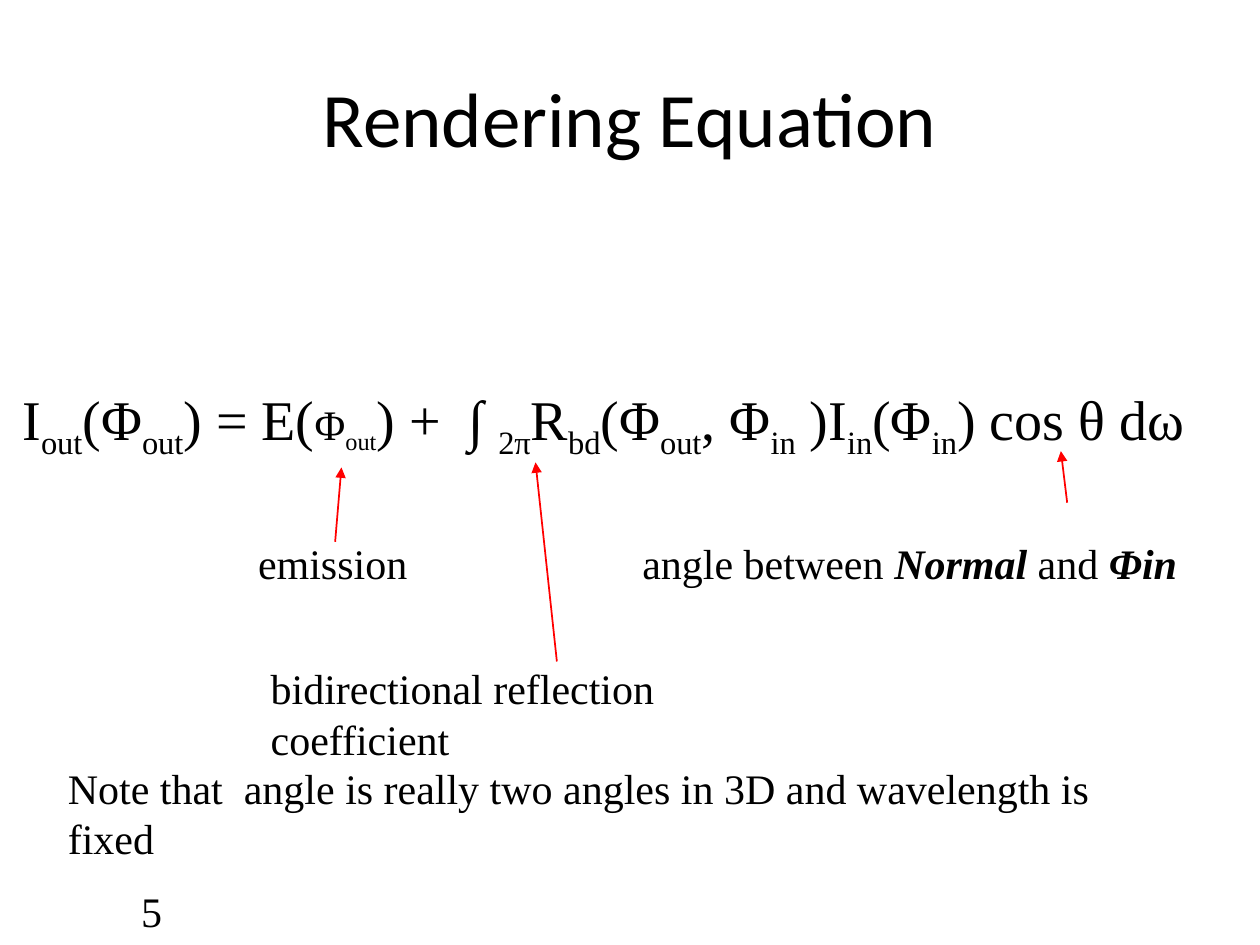
"""Builds the Rendering Equation slide: the formula, its annotated terms and a note."""
from dataclasses import dataclass

import lxml.etree
import pptx
import pptx.dml.color
import pptx.enum.shapes
import pptx.enum.text
import pptx.oxml.ns
import pptx.util

COLUMNS, ROWS = 100, 75


@dataclass(frozen=True)
class Theme:
    ink: str = "000000"
    arrow: str = "FF0000"
    title_font: str = "Calibri"
    body_font: str = "Times New Roman"
    title_size: int = 44
    formula_size: int = 32
    body_size: int = 24
    arrow_width: float = 1


THEME = Theme()


@dataclass(frozen=True)
class Box:
    col: float
    row: float
    cols: float
    rows: float


@dataclass(frozen=True)
class Term:
    text: str
    size: int = THEME.body_size
    sub: bool = False
    bold: bool = False
    italic: bool = False


@dataclass(frozen=True)
class Label:
    box: Box
    terms: tuple[Term, ...]
    wrap: bool = False


@dataclass(frozen=True)
class Arrow:
    start: tuple[float, float]
    end: tuple[float, float]


def big(text: str, bold: bool = False) -> Term:
    return Term(text, THEME.formula_size, bold=bold)


def sub(text: str, size: int = THEME.formula_size) -> Term:
    return Term(text, size, sub=True)


def strong(text: str) -> Term:
    return Term(text, bold=True, italic=True)


FORMULA = (
    big("I"), sub("out"), big("(Φ"), sub("out"), big(") = E("),
    Term("Φ"), sub("out", THEME.body_size), big(") +  "),
    big("∫ ", bold=True), sub("2π"), big("R"), sub("bd"),
    big("(Φ"), sub("out"), big(", Φ"), sub("in"), big(" )I"), sub("in"),
    big("(Φ"), sub("in"), big(") cos θ dω"),
)
TITLE_BOX = Box(5, 3, 90, 12.5)
NUMBER_BOX = Box(5, 70.8, 23.3, 3)
LABELS = (
    Label(Box(0.8, 30, 98.5, 6.3), FORMULA, wrap=True),
    Label(Box(20.5, 52.1, 47.4, 5), (Term("bidirectional reflection coefficient"),)),
    Label(Box(50, 42.2, 44.6, 5.1),
          (Term("angle between "), strong("Normal"), Term(" and "), strong("Φin"))),
    Label(Box(19.5, 42.2, 13.9, 5), (Term("emission"),)),
    Label(Box(4.4, 60, 90.7, 5),
          (Term("Note that  angle is really two angles in 3D and wavelength is fixed"),),
          wrap=True),
)
ARROWS = (
    Arrow((44.2, 52.5), (42.5, 36.7)),
    Arrow((84.7, 39.9), (84.2, 35.8)),
    Arrow((26.6, 43), (27.1, 37.1)),
)


def across(prs, cols: float) -> int:
    return round(prs.slide_width * cols / COLUMNS)


def down(prs, rows: float) -> int:
    return round(prs.slide_height * rows / ROWS)


def place(prs, box: Box) -> tuple[int, int, int, int]:
    return (across(prs, box.col), down(prs, box.row),
            across(prs, box.cols), down(prs, box.rows))


def style(r, font: str, size: float) -> None:
    r.font.name = font
    r.font.size = pptx.util.Pt(size)
    r.font.color.rgb = pptx.dml.color.RGBColor.from_string(THEME.ink)


def add_title(prs, s, text: str) -> None:
    sp = s.shapes.title
    sp.left, sp.top, sp.width, sp.height = place(prs, TITLE_BOX)
    tf = sp.text_frame
    tf.text = text
    tf.vertical_anchor = pptx.enum.text.MSO_ANCHOR.MIDDLE
    p = tf.paragraphs[0]
    p.alignment = pptx.enum.text.PP_ALIGN.CENTER
    style(p.runs[0], THEME.title_font, THEME.title_size)


def add_number(prs, s, text: str) -> None:
    tf = s.shapes.add_textbox(*place(prs, NUMBER_BOX)).text_frame
    tf.text = text
    tf.word_wrap = True
    tf.margin_left = pptx.util.Inches(0.12)
    tf.margin_right = pptx.util.Inches(0.05)
    tf.vertical_anchor = pptx.enum.text.MSO_ANCHOR.MIDDLE
    p = tf.paragraphs[0]
    p.level = 1
    style(p.runs[0], THEME.body_font, THEME.body_size)


def add_label(prs, s, label: Label) -> None:
    tf = s.shapes.add_textbox(*place(prs, label.box)).text_frame
    tf.word_wrap = label.wrap
    tf.auto_size = pptx.enum.text.MSO_AUTO_SIZE.SHAPE_TO_FIT_TEXT
    p = tf.paragraphs[0]
    for term in label.terms:
        r = p.add_run()
        r.text = term.text
        style(r, THEME.body_font, term.size)
        r.font.bold, r.font.italic = term.bold, term.italic
        if term.sub:
            r._r.get_or_add_rPr().set("baseline", "-25000")


def add_arrow(prs, s, arrow: Arrow) -> None:
    (x1, y1), (x2, y2) = arrow.start, arrow.end
    sp = s.shapes.add_connector(
        pptx.enum.shapes.MSO_CONNECTOR.STRAIGHT,
        across(prs, x1), down(prs, y1), across(prs, x2), down(prs, y2))
    sp.line.color.rgb = pptx.dml.color.RGBColor.from_string(THEME.arrow)
    sp.line.width = pptx.util.Pt(THEME.arrow_width)
    qn = pptx.oxml.ns.qn
    lxml.etree.SubElement(sp.line._get_or_add_ln(), qn("a:tailEnd"), type="triangle")
    lxml.etree.SubElement(sp._element.spPr, qn("a:effectLst"))


def main() -> None:
    prs = pptx.Presentation()
    prs.slide_width, prs.slide_height = pptx.util.Inches(10), pptx.util.Inches(7.5)
    s = prs.slides.add_slide(prs.slide_layouts[5])
    add_title(prs, s, "Rendering Equation")
    add_number(prs, s, "5")
    for label in LABELS:
        add_label(prs, s, label)
    for arrow in ARROWS:
        add_arrow(prs, s, arrow)
    prs.save("out.pptx")


if __name__ == "__main__":
    main()
